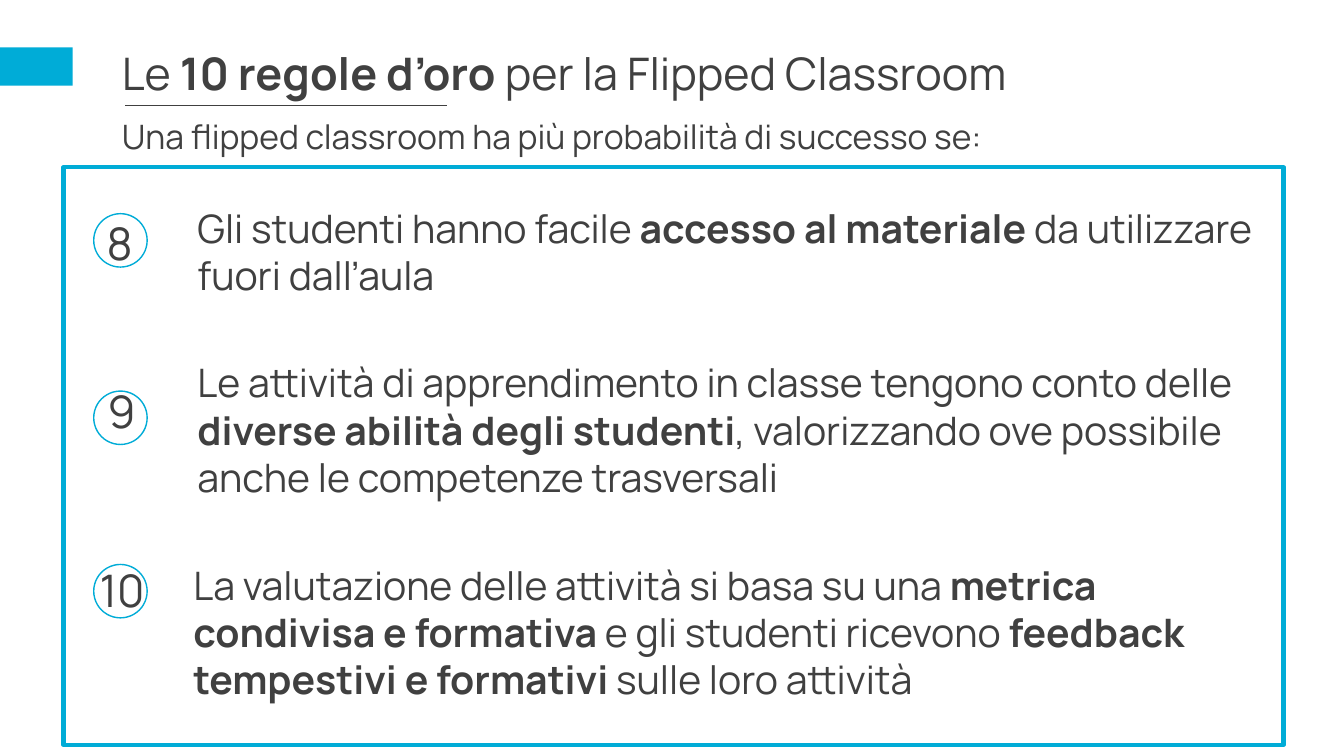
from lxml.etree import SubElement
from pptx import Presentation
from pptx.dml.color import RGBColor
from pptx.enum.shapes import MSO_CONNECTOR, MSO_SHAPE
from pptx.enum.text import MSO_AUTO_SIZE
from pptx.oxml.ns import qn
from pptx.util import Inches, Pt

CYAN = RGBColor(0x00, 0xAC, 0xD7)
GREY = RGBColor(0x40, 0x40, 0x40)
FONT = "Manrope"
RING = 0.53

# Each rule: number, number box, ring top, text box, runs (text, bold)
RULES = [
    ("8", (0.96, 2.09, 0.49, 0.64), 2.12, (1.86, 1.98, 10.81, 1.04), [
        ("Gli studenti hanno facile", False),
        (" accesso al materiale", True),
        (" da utilizzare fuori dall’aula", False)]),
    ("9", (0.97, 3.76, 0.49, 0.64), 3.88, (1.86, 3.51, 11.03, 1.51), [
        ("Le attività di apprendimento in classe tengono conto delle ", False),
        ("diverse abilità degli studenti", True),
        (", valorizzando ove possibile anche le competenze trasversali",
         False)]),
    ("10", (0.89, 5.53, 0.78, 0.64), 5.6, (1.82, 5.52, 10.08, 1.51), [
        ("La valutazione delle attività si basa su una ", False),
        ("metrica condivisa e formativa", True),
        (" e gli studenti ricevono ", False),
        ("feedback tempestivi e formativi", True),
        (" sulle loro attività", False)]),
]


def add_text(slide, box, size, runs):
    frame = slide.shapes.add_textbox(*map(Inches, box)).text_frame
    frame.word_wrap = True
    frame.auto_size = MSO_AUTO_SIZE.SHAPE_TO_FIT_TEXT
    for text, bold in runs:
        run = frame.paragraphs[0].add_run()
        run.text = text
        run.font.name = FONT
        run.font.size = Pt(size)
        run.font.bold = bold
        run.font.color.rgb = GREY


def add_shape(slide, kind, box, fill=None, width=None):
    shape = slide.shapes.add_shape(kind, *map(Inches, box))
    shape.shadow.inherit = False
    if fill is None:
        shape.fill.background()
    else:
        shape.fill.solid()
        shape.fill.fore_color.rgb = fill
    if width is None:
        shape.line.fill.background()
    else:
        shape.line.color.rgb = CYAN
        shape.line.width = Pt(width)


def add_line(slide, left, right, top):
    line = slide.shapes.add_connector(
        MSO_CONNECTOR.STRAIGHT,
        Inches(left), Inches(top), Inches(right), Inches(top))
    line.line.color.rgb = GREY
    line.line.width = Pt(0.5)
    SubElement(line._element.spPr, qn("a:effectLst"))


def main():
    deck = Presentation()
    deck.slide_width = Inches(13.33)
    deck.slide_height = Inches(7.5)
    slide = deck.slides.add_slide(deck.slide_layouts[6])

    # Side accent and frame
    add_shape(slide, MSO_SHAPE.RECTANGLE, (0, 0.47, 0.72, 0.38), fill=CYAN)
    add_shape(slide, MSO_SHAPE.RECTANGLE, (0.63, 1.66, 12.1, 5.73), width=3)

    # Numbered rules
    for number, spot, top, box, runs in RULES:
        add_text(slide, box, 28, runs)
        add_text(slide, spot, 32, [(number, False)])
        add_shape(slide, MSO_SHAPE.OVAL, (0.93, top, RING, RING), width=1)

    # Title, underline and lead
    add_text(slide, (1.11, 0.4, 11.33, 0.64), 32, [
        ("Le ", False),
        ("10 regole d’oro ", True),
        ("per la Flipped Classroom", False)])
    add_line(slide, 1.24, 4.43, 1.05)
    add_text(slide, (1.11, 1.1, 9.49, 0.5), 24, [
        ("Una flipped classroom ha più probabilità di successo se:", False)])

    deck.save("out.pptx")


if __name__ == "__main__":
    main()
